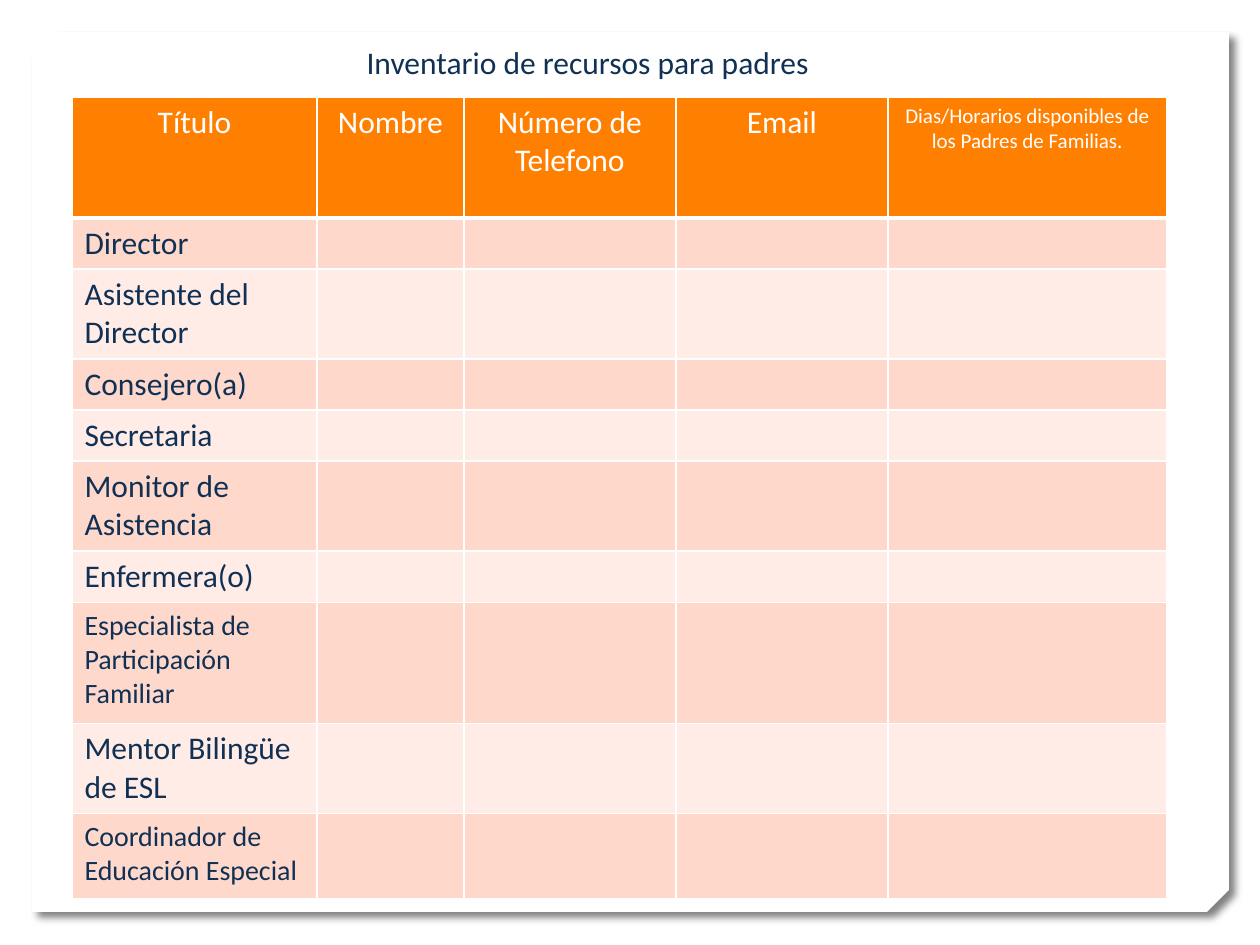
from dataclasses import dataclass

from lxml import etree
from pptx import Presentation
from pptx.dml.color import RGBColor
from pptx.enum.shapes import MSO_SHAPE
from pptx.enum.text import MSO_ANCHOR, MSO_AUTO_SIZE, PP_ALIGN
from pptx.oxml.ns import qn
from pptx.util import Pt

PX = 914400 // 126
TITLE_ONLY = 5
CARD_SHAPE = MSO_SHAPE.SNIP_2_DIAG_RECTANGLE
LEFT, CENTER = PP_ALIGN.LEFT, PP_ALIGN.CENTER
TOP = MSO_ANCHOR.TOP
NO_AUTOFIT = MSO_AUTO_SIZE.NONE

FONT = "Calibri"
WHITE, NAVY, ORANGE = "FFFFFF", "103154", "FF7F01"
BANDS = ("FFD8CC", "FFECE7")


@dataclass(frozen=True)
class Box:
    left: int
    top: int
    width: int
    height: int

    def emu(self) -> tuple[int, ...]:
        return tuple(v * PX for v in (self.left, self.top, self.width, self.height))


@dataclass(frozen=True)
class Column:
    heading: str
    width: int
    size: int = 18


@dataclass(frozen=True)
class Role:
    name: str
    height: int
    size: int = 18


CARD = Box(32, 32, 1197, 880)
TITLE = Box(354, 37, 600, 50)
TABLE_LEFT, TABLE_TOP, HEADER_HEIGHT = 72, 97, 121

COLUMNS = (
    Column("Título", 245),
    Column("Nombre", 147),
    Column("Número de Telefono", 212),
    Column("Email", 212),
    Column("Dias/Horarios disponibles de los Padres de Familias.", 279, 12),
)
ROLES = (
    Role("Director", 51),
    Role("Asistente del Director", 90),
    Role("Consejero(a)", 51),
    Role("Secretaria", 51),
    Role("Monitor de Asistencia", 90),
    Role("Enfermera(o)", 51),
    Role("Especialista de Participación Familiar", 121, 16),
    Role("Mentor Bilingüe de ESL", 90),
    Role("Coordinador de Educación Especial", 85, 16),
)


def rgb(value: str) -> RGBColor:
    return RGBColor.from_string(value)


def fill_solid(target, color: str) -> None:
    target.fill.solid()
    target.fill.fore_color.rgb = rgb(color)


def write_text(tf, text: str, size: int, color: str, align) -> None:
    p = tf.paragraphs[0]
    p.alignment = align
    r = p.add_run()
    r.text = text
    font_format = {"name": FONT, "size": Pt(size), "bold": False}
    for name, value in font_format.items():
        setattr(r.font, name, value)
    r.font.color.rgb = rgb(color)


def add_color(parent, color: str):
    return etree.SubElement(parent, qn("a:srgbClr"), val=color)


def add_shadow(shape) -> None:
    effects = etree.SubElement(shape.element.spPr, qn("a:effectLst"))
    shadow = etree.SubElement(
        effects, qn("a:outerShdw"), blurRad=str(Pt(4)), dist=str(Pt(5)),
        dir=str(45 * 60000), algn="tl", rotWithShape="0")
    etree.SubElement(add_color(shadow, "000000"), qn("a:alpha"), val="50000")


def set_borders(cell, bottom: int = 1) -> None:
    """Draw white borders, given the bottom width in points."""
    tc_pr = cell._tc.get_or_add_tcPr()
    widths = {"a:lnL": 1, "a:lnR": 1, "a:lnT": 1, "a:lnB": bottom}
    for i, (tag, width) in enumerate(widths.items()):
        ln = etree.Element(qn(tag), w=str(Pt(width)))
        add_color(etree.SubElement(ln, qn("a:solidFill")), WHITE)
        tc_pr.insert(i, ln)


def add_title(s) -> None:
    sp = s.shapes.title
    sp.left, sp.top, sp.width, sp.height = TITLE.emu()
    tf = sp.text_frame
    frame_format = {"word_wrap": True, "auto_size": NO_AUTOFIT, "vertical_anchor": TOP}
    for name, value in frame_format.items():
        setattr(tf, name, value)
    write_text(tf, "Inventario de recursos para padres", 18, NAVY, LEFT)


def add_card(s) -> None:
    """Place the snipped white card behind the title."""
    sp = s.shapes.add_shape(CARD_SHAPE, *CARD.emu())
    sp.adjustments[0], sp.adjustments[1] = 0.025, 0
    fill_solid(sp, WHITE)
    sp.line.fill.background()
    add_shadow(sp)
    s.shapes.title.element.addprevious(sp.element)


def add_inventory(s) -> None:
    heights = [HEADER_HEIGHT] + [role.height for role in ROLES]
    box = Box(TABLE_LEFT, TABLE_TOP, sum(c.width for c in COLUMNS), sum(heights))
    table = s.shapes.add_table(len(heights), len(COLUMNS), *box.emu()).table
    for row, height in zip(table.rows, heights):
        row.height = height * PX
    for i, column in enumerate(COLUMNS):
        table.columns[i].width = column.width * PX
        cell = table.cell(0, i)
        fill_solid(cell, ORANGE)
        set_borders(cell, bottom=3)
        write_text(cell.text_frame, column.heading, column.size, WHITE, CENTER)
    for i, role in enumerate(ROLES):
        cells = table.rows[i + 1].cells
        for cell in cells:
            fill_solid(cell, BANDS[i % 2])
            set_borders(cell)
        write_text(cells[0].text_frame, role.name, role.size, NAVY, LEFT)


def main() -> None:
    prs = Presentation()
    prs.slide_width, prs.slide_height = 1260 * PX, 945 * PX
    s = prs.slides.add_slide(prs.slide_layouts[TITLE_ONLY])
    add_title(s)
    add_card(s)
    add_inventory(s)
    prs.save("out.pptx")


if __name__ == "__main__":
    main()
